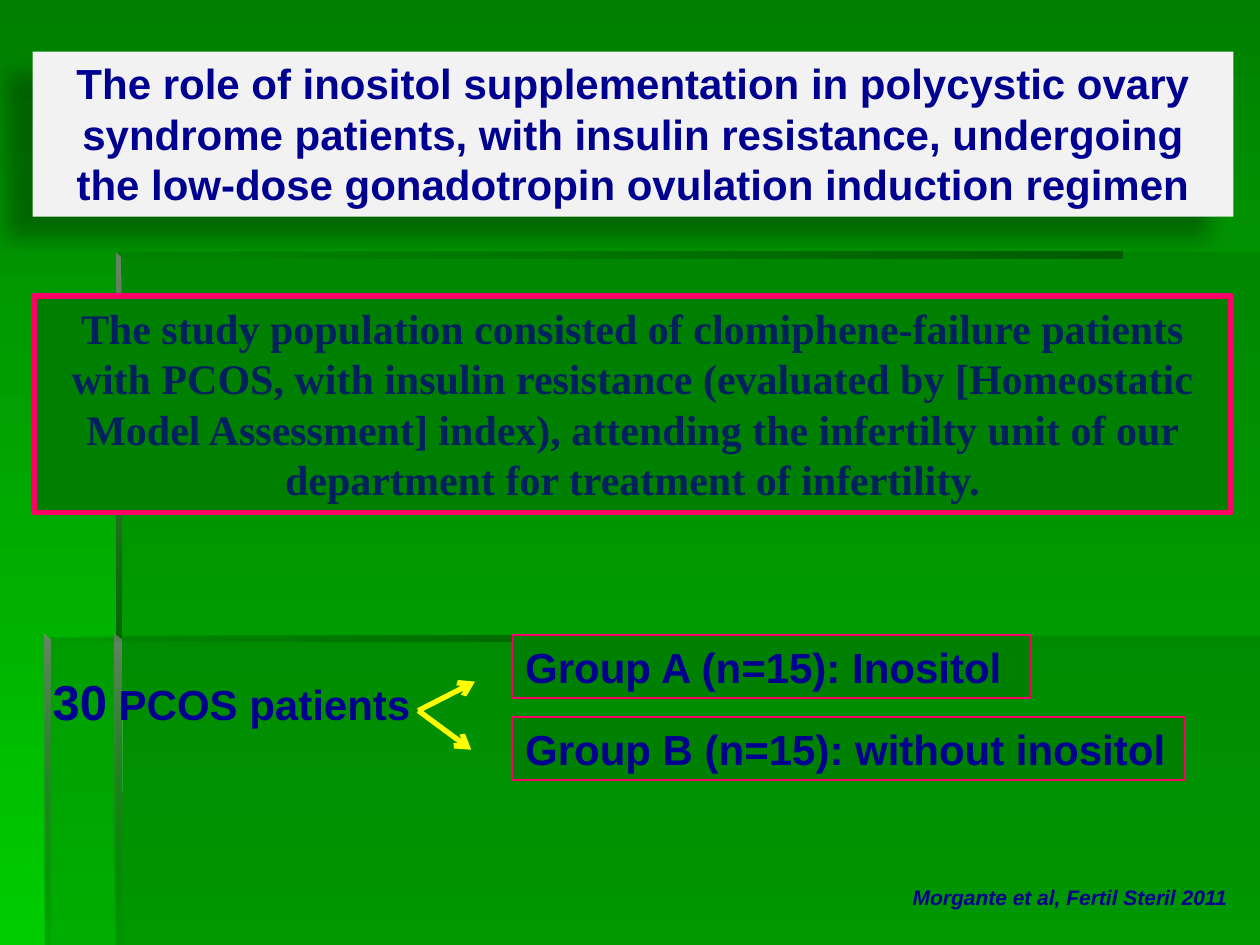
from typing import NamedTuple, Optional

from lxml import etree
from pptx import Presentation
from pptx.dml.color import RGBColor
from pptx.enum.shapes import MSO_CONNECTOR, MSO_SHAPE
from pptx.enum.text import MSO_ANCHOR, MSO_AUTO_SIZE, PP_ALIGN
from pptx.oxml.ns import qn
from pptx.util import Inches, Pt

RECTANGLE, STRAIGHT = MSO_SHAPE.RECTANGLE, MSO_CONNECTOR.STRAIGHT
LEFT, CENTER, RIGHT = PP_ALIGN.LEFT, PP_ALIGN.CENTER, PP_ALIGN.RIGHT
TOP, FIT_SHAPE = MSO_ANCHOR.TOP, MSO_AUTO_SIZE.SHAPE_TO_FIT_TEXT

# The slide is a grid of square cells: 100 columns by 75 rows
COLUMNS, ROWS = 100, 75
CELL = Inches(0.1)
DOWN, ACROSS = 270, 0  # gradient angles, counter-clockwise
GREEN, DARK, EDGE, BEVEL = "008000", "006600", "005E00", "668666"
NAVY, PINK, YELLOW = "000090", "FF0066", "FFFF00"


class Stop(NamedTuple):
    color: str
    opacity: int = 100


class Panel(NamedTuple):
    points: list
    stops: list
    angle: int = ACROSS


class Run(NamedTuple):
    text: str
    size: int = 24


class Box(NamedTuple):
    column: float
    row: float
    width: float
    height: float
    paragraphs: list
    fill: Optional[str] = None
    line_width: float = 0
    align: int = LEFT
    wrap: bool = False
    font: str = "Arial"
    color: str = NAVY
    italic: bool = False


def grid(cells: float) -> int:
    return round(cells * CELL)


def rgb(color: str) -> RGBColor:
    return RGBColor.from_string(color)


def set_opacity(color_element, opacity: int) -> None:
    if opacity < 100:
        etree.SubElement(color_element, qn("a:alpha"), val=str(opacity * 1000))


def paint_gradient(fill, stops: list, angle: int) -> None:
    fill.gradient()
    fill.gradient_angle = angle
    for gradient_stop, position, stop in zip(fill.gradient_stops, (0, 1), stops):
        gradient_stop.position = position
        gradient_stop.color.rgb = rgb(stop.color)


def draw_panel(slide, panel: Panel) -> None:
    points = [(grid(column), grid(row)) for column, row in panel.points]
    builder = slide.shapes.build_freeform(*points[0])
    builder.add_line_segments(points[1:], close=True)
    shape = builder.convert_to_shape()
    shape.shadow.inherit = False
    shape.line.fill.background()
    if len(panel.stops) == 1:
        shape.fill.solid()
        shape.fill.fore_color.rgb = rgb(panel.stops[0].color)
    else:
        paint_gradient(shape.fill, panel.stops, panel.angle)
    colors = shape.element.spPr.iter(qn("a:srgbClr"))
    for color_element, stop in zip(list(colors), panel.stops):
        set_opacity(color_element, stop.opacity)


def draw_box(slide, box: Box):
    place = [grid(cells) for cells in box[:4]]
    if box.fill:
        shape = slide.shapes.add_shape(RECTANGLE, *place)
        shape.shadow.inherit = False
        shape.fill.solid()
        shape.fill.fore_color.rgb = rgb(box.fill)
        if box.line_width:
            shape.line.color.rgb = rgb(PINK)
            shape.line.width = Pt(box.line_width)
        else:
            shape.line.fill.background()
    else:
        shape = slide.shapes.add_textbox(*place)
    frame = shape.text_frame
    frame.text = "\n".join("".join(run.text for run in runs) for runs in box.paragraphs)
    frame.word_wrap = box.wrap
    frame.auto_size = FIT_SHAPE
    frame.vertical_anchor = TOP
    for paragraph, runs in zip(frame.paragraphs, box.paragraphs):
        paragraph.alignment = box.align
        paragraph.runs[0].text = runs[0].text
        for extra in runs[1:]:
            paragraph.add_run().text = extra.text
        for text_run, run in zip(paragraph.runs, runs):
            font = text_run.font
            font.name, font.size = box.font, Pt(run.size)
            font.bold, font.italic = True, box.italic
            font.color.rgb = rgb(box.color)
    return shape


def add_shadow(shape, opacity: int, blur: float, distance: float, angle: int) -> None:
    effects = shape.element.spPr.find(qn("a:effectLst"))
    shadow = etree.SubElement(
        effects, qn("a:outerShdw"), blurRad=str(Pt(blur)), dist=str(Pt(distance)),
        dir=str(angle * 60000), algn="tl", rotWithShape="0")
    set_opacity(etree.SubElement(shadow, qn("a:srgbClr"), val="000000"), opacity)


def draw_arrow(slide, start: tuple, end: tuple) -> None:
    arrow = slide.shapes.add_connector(STRAIGHT, *map(grid, start + end))
    arrow.line.color.rgb = rgb(YELLOW)
    arrow.line.width = Pt(3)
    etree.SubElement(arrow.line._get_or_add_ln(), qn("a:tailEnd"), type="arrow")
    etree.SubElement(arrow.element.spPr, qn("a:effectLst"))


VEIL = [Stop(DARK, 30)]
FADE_IN = [Stop(DARK, 0), Stop(EDGE)]
PANELS = [
    # Translucent steps
    Panel([(9.2, 50.5), (9.2, ROWS), (COLUMNS, ROWS), (COLUMNS, 50.5)], VEIL),
    Panel([(9.4, 50.6), (3.6, 50.6), (3.6, ROWS), (COLUMNS, ROWS),
           (COLUMNS, 20), (9.4, 20)], VEIL),
    # Bevelled edges
    Panel([(9.2, 20), (9.2, 20.5), (89.1, 20.5), (89.1, 20)], FADE_IN),
    Panel([(9.2, 20), (9.2, 51), (9.7, 51), (9.6, 20.4)],
          [Stop(BEVEL), Stop(DARK)], DOWN),
    Panel([(9.1, ROWS), (9.7, ROWS), (9.6, 50.8), (9.1, 50.4)],
          [Stop(BEVEL), Stop(DARK, 0)], DOWN),
    Panel([(3.5, 50.4), (3.5, 50.9), (53.5, 50.9), (53.5, 50.4)], FADE_IN),
    Panel([(3.5, 50.4), (3.5, ROWS), (4, ROWS), (4, 50.9)],
          [Stop(BEVEL), Stop(DARK, 10)], DOWN),
]

PATIENTS = Box(3.2, 52.8, 30.7, 5.7, [[Run("30", 28), Run(" PCOS patients")]])
GROUPS = [
    Box(40.7, 50.4, 41.1, 5, [[Run("Group A (n=15): Inositol")]], GREEN, 0.75),
    Box(40.7, 56.9, 53.3, 5, [[Run("Group B (n=15): without inositol")]], GREEN, 0.75),
]
FORK, ARROW_ENDS = (33.2, 56.4), [(37.7, 54.1), (37.4, 59.5)]
CITATION = Box(70.7, 69.7, 27.7, 3, [[Run("Morgante et al, Fertil Steril 2011", 12)]],
               align=RIGHT, italic=True)
STUDY = Box(2.7, 23.5, 95, 17.2, [[Run(
    "The study population consisted of clomiphene-failure patients with PCOS, "
    "with insulin resistance (evaluated by [Homeostatic Model Assessment] index), "
    "attending the infertilty unit of our department for treatment of infertility.")]],
    GREEN, 3, CENTER, True, "Times New Roman", "002060")
TITLE = Box(2.6, 4.1, 95.3, 13.1, [
    [Run("The role of inositol supplementation in polycystic ovary")],
    [Run("syndrome patients, with insulin resistance, undergoing "
         "the low-dose gonadotropin ovulation induction regimen")]],
    "F2F2F2", align=CENTER, wrap=True)


def main() -> None:
    presentation = Presentation()
    presentation.slide_width = grid(COLUMNS)
    presentation.slide_height = grid(ROWS)
    slide = presentation.slides.add_slide(presentation.slide_layouts[6])

    # Backdrop
    paint_gradient(slide.background.fill, [Stop(GREEN), Stop("00CC00")], DOWN)
    for panel in PANELS:
        draw_panel(slide, panel)

    # Patients split into two groups
    for box in [PATIENTS, *GROUPS]:
        draw_box(slide, box)
    for end in ARROW_ENDS:
        draw_arrow(slide, FORK, end)

    # Citation, study population and title
    draw_box(slide, CITATION)
    draw_box(slide, STUDY)
    add_shadow(draw_box(slide, TITLE), opacity=28, blur=11.8, distance=19.7, angle=141)
    presentation.save("out.pptx")


if __name__ == "__main__":
    main()
